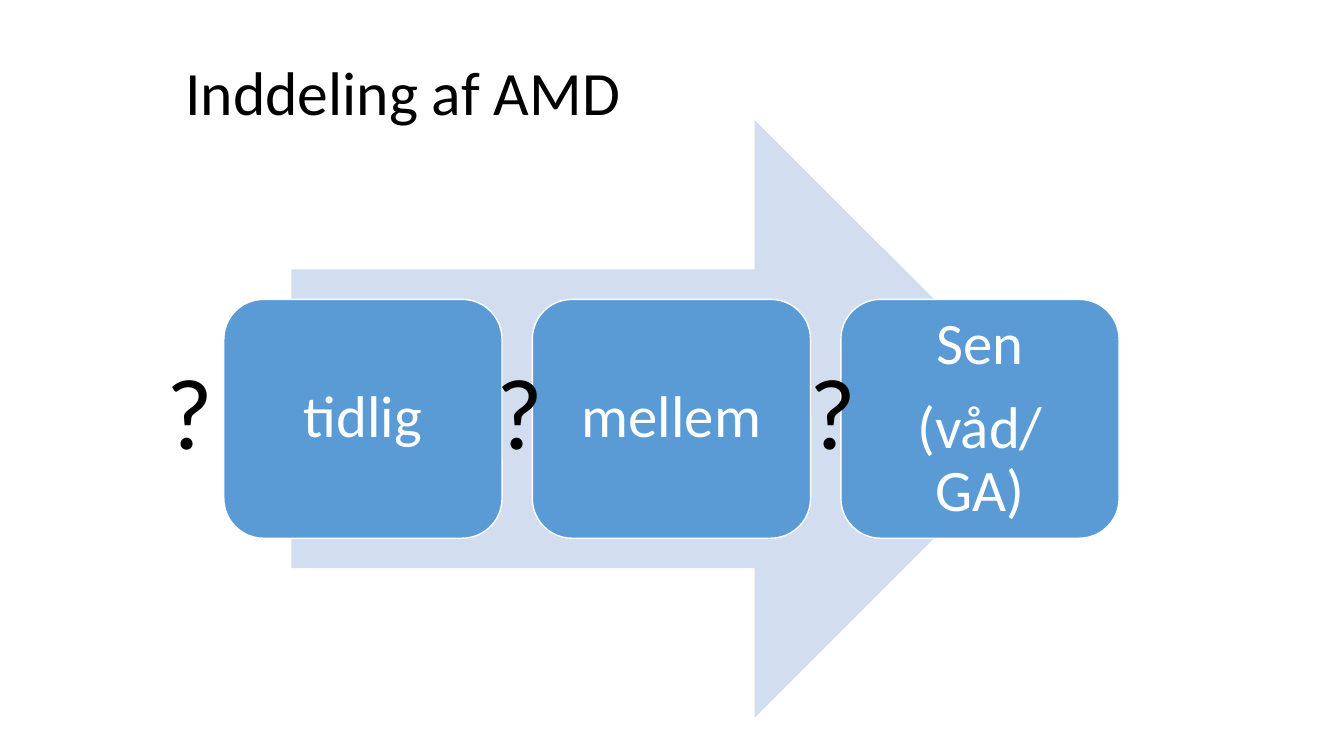
from pptx import Presentation
from pptx.dml.color import RGBColor
from pptx.enum.shapes import MSO_SHAPE
from pptx.enum.text import MSO_ANCHOR, PP_ALIGN
from pptx.util import Inches, Pt

ARROW = MSO_SHAPE.RIGHT_ARROW
ROUNDED = MSO_SHAPE.ROUNDED_RECTANGLE
MIDDLE, TOP = MSO_ANCHOR.MIDDLE, MSO_ANCHOR.TOP
CENTER, LEFT = PP_ALIGN.CENTER, PP_ALIGN.LEFT

COLORS = {"text": "000000", "arrow": "D2DEEF", "stage": "5B9BD5", "white": "FFFFFF"}


def color(name):
    return RGBColor.from_string(COLORS[name])


def write(frame, lines, size, ink, frame_format, paragraph_format):
    frame.word_wrap = True
    for key, value in frame_format.items():
        setattr(frame, key, value)
    for index, line in enumerate(lines):
        paragraph = frame.paragraphs[0] if index == 0 else frame.add_paragraph()
        for key, value in paragraph_format.items():
            setattr(paragraph, key, value)
        run = paragraph.add_run()
        run.text = line
        run.font.name = "Calibri"
        run.font.size = Pt(size)
        run.font.color.rgb = color(ink)


deck = Presentation()
deck.slide_width, deck.slide_height = Inches(13.33), Inches(7.5)
slide = deck.slides.add_slide(deck.slide_layouts[6])

title = slide.shapes.add_textbox(Inches(1.74), Inches(0.22), Inches(11.5), Inches(1.45))
write(title.text_frame, ["Inddeling af AMD"], 44, "text",
      {"vertical_anchor": MIDDLE}, {"alignment": LEFT, "line_spacing": 0.9})

progression = slide.shapes.add_shape(ARROW, Inches(2.89), Inches(1.19), Inches(7.56), Inches(5.93))
progression.shadow.inherit = False
progression.fill.solid()
progression.fill.fore_color.rgb = color("arrow")
progression.line.fill.background()

inset = Inches(0.28)
stage_frame = {"vertical_anchor": MIDDLE, "margin_left": inset, "margin_right": inset,
               "margin_top": inset, "margin_bottom": inset}
stage_paragraph = {"alignment": CENTER, "line_spacing": 0.9, "space_after": Pt(14.7)}
stages = [["tidlig"], ["mellem"], ["Sen", "(våd/GA)"]]
for index, lines in enumerate(stages):
    stage = slide.shapes.add_shape(ROUNDED, Inches(2.22 + index * 3.06), Inches(2.97),
                                   Inches(2.76), Inches(2.37))
    stage.shadow.inherit = False
    stage.fill.solid()
    stage.fill.fore_color.rgb = color("stage")
    stage.line.color.rgb = color("white")
    stage.line.width = Pt(1)
    write(stage.text_frame, lines, 42, "white", stage_frame, stage_paragraph)

for left in (1.55, 4.83, 7.93):
    question = slide.shapes.add_textbox(Inches(left), Inches(3.41), Inches(1), Inches(1.31))
    write(question.text_frame, ["?"], 72, "text", {"vertical_anchor": TOP}, {"alignment": LEFT})

deck.save("out.pptx")
